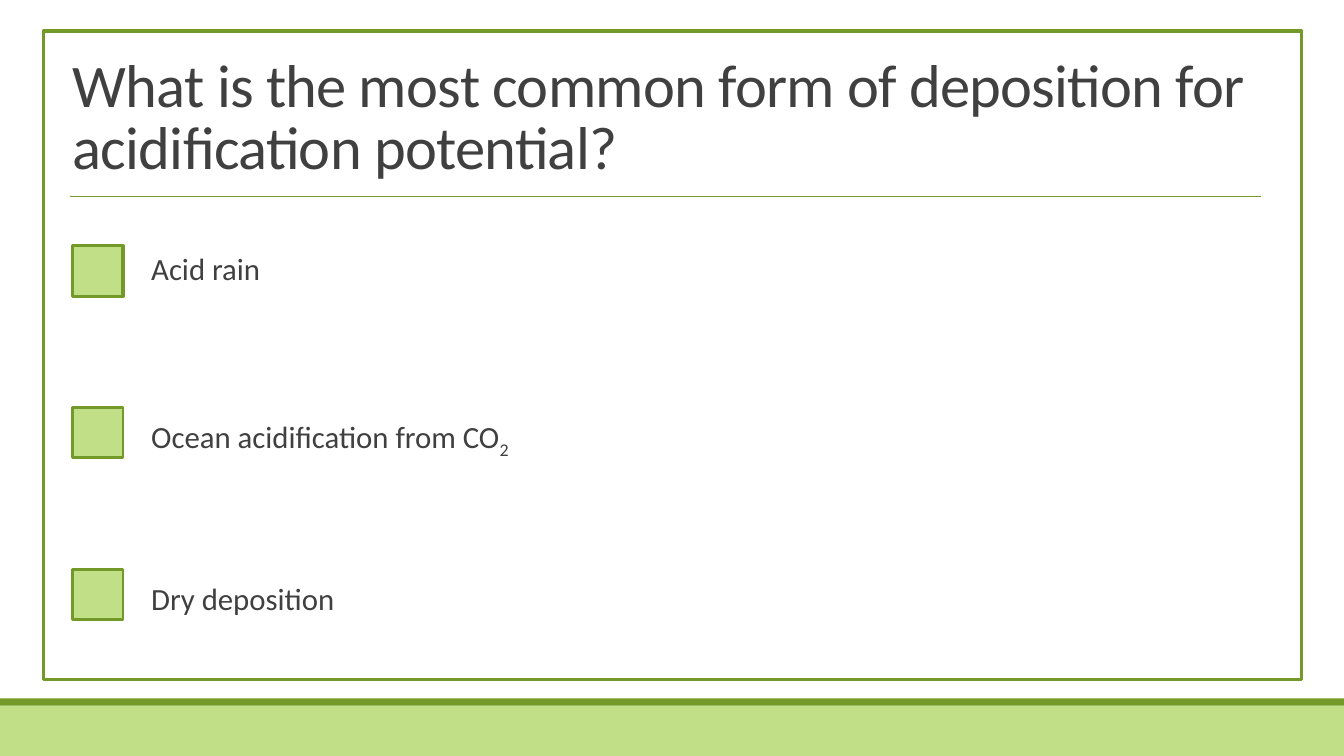
from pptx import Presentation
from pptx.dml.color import RGBColor
from pptx.enum.shapes import MSO_CONNECTOR, MSO_SHAPE
from pptx.enum.text import MSO_ANCHOR, MSO_AUTO_SIZE, PP_ALIGN
from pptx.oxml.ns import qn
from pptx.util import Inches, Pt
from lxml import etree

COLORS = {"green": "739A28", "light": "C1DF87", "text": "404040"}


def color(name):
    return RGBColor.from_string(COLORS[name])


def add_rect(left, top, width, height, fill=None, line_width=None):
    sp = s.shapes.add_shape(MSO_SHAPE.RECTANGLE, Inches(left), Inches(top),
                            Inches(width), Inches(height))
    sp.shadow.inherit = False
    if fill:
        sp.fill.solid()
        sp.fill.fore_color.rgb = color(fill)
    else:
        sp.fill.background()
    if line_width:
        sp.line.color.rgb = color("green")
        sp.line.width = Pt(line_width)
    else:
        sp.line.fill.background()


prs = Presentation()
prs.slide_width, prs.slide_height = Inches(13.33), Inches(7.5)
s = prs.slides.add_slide(prs.slide_layouts[5])

# Footer bands and frame
add_rect(0, 7, 13.33, 0.5, fill="light")
add_rect(0, 6.93, 13.33, 0.07, fill="green")
add_rect(0.43, 0.31, 12.48, 6.43, line_width=2.5)

# Question
title = s.shapes.title
title.left, title.top = Inches(0.62), Inches(0.4)
title.width, title.height = Inches(12.4), Inches(1.45)
tf = title.text_frame
tf.word_wrap = True
tf.auto_size = MSO_AUTO_SIZE.NONE
tf.vertical_anchor = MSO_ANCHOR.BOTTOM
p = tf.paragraphs[0]
p.alignment = PP_ALIGN.LEFT
p.line_spacing = 0.85
r = p.add_run()
r.text = "What is the most common form of deposition for acidification potential?"
r.font.name, r.font.size = "Calibri", Pt(43.2)
r.font.color.rgb = color("text")
r.font._element.set("spc", "-50")

rule = s.shapes.add_connector(MSO_CONNECTOR.STRAIGHT, Inches(0.69), Inches(1.95),
                              Inches(12.51), Inches(1.95))
rule.line.color.rgb = color("green")
rule.line.width = Pt(1)
etree.SubElement(rule._element.spPr, qn("a:effectLst"))

# Answers: box top, box line width, text top, text height, text, subscript
answers = [
    (2.44, 2.25, 2.47, 0.95, "Acid rain", ""),
    (4.04, 2, 4.1, 0.66, "Ocean acidification from CO", "2"),
    (5.65, 2, 5.74, 1.12, "Dry deposition", ""),
]
for box_top, line_width, text_top, height, text, subscript in answers:
    add_rect(0.72, box_top, 0.5, 0.5, fill="light", line_width=line_width)
    answer = s.shapes.add_textbox(Inches(1.5), Inches(text_top),
                                  Inches(10.82), Inches(height))
    tf = answer.text_frame
    tf.word_wrap = True
    tf.margin_left = tf.margin_right = 0
    p = tf.paragraphs[0]
    p.line_spacing = 0.9
    p.space_after = Pt(2)
    for part, baseline in ((text, 0), (subscript, -25000)):
        if part:
            r = p.add_run()
            r.text = part
            r.font.name, r.font.size = "Calibri", Pt(22)
            r.font.color.rgb = color("text")
            if baseline:
                r.font._element.set("baseline", str(baseline))

prs.save("out.pptx")
